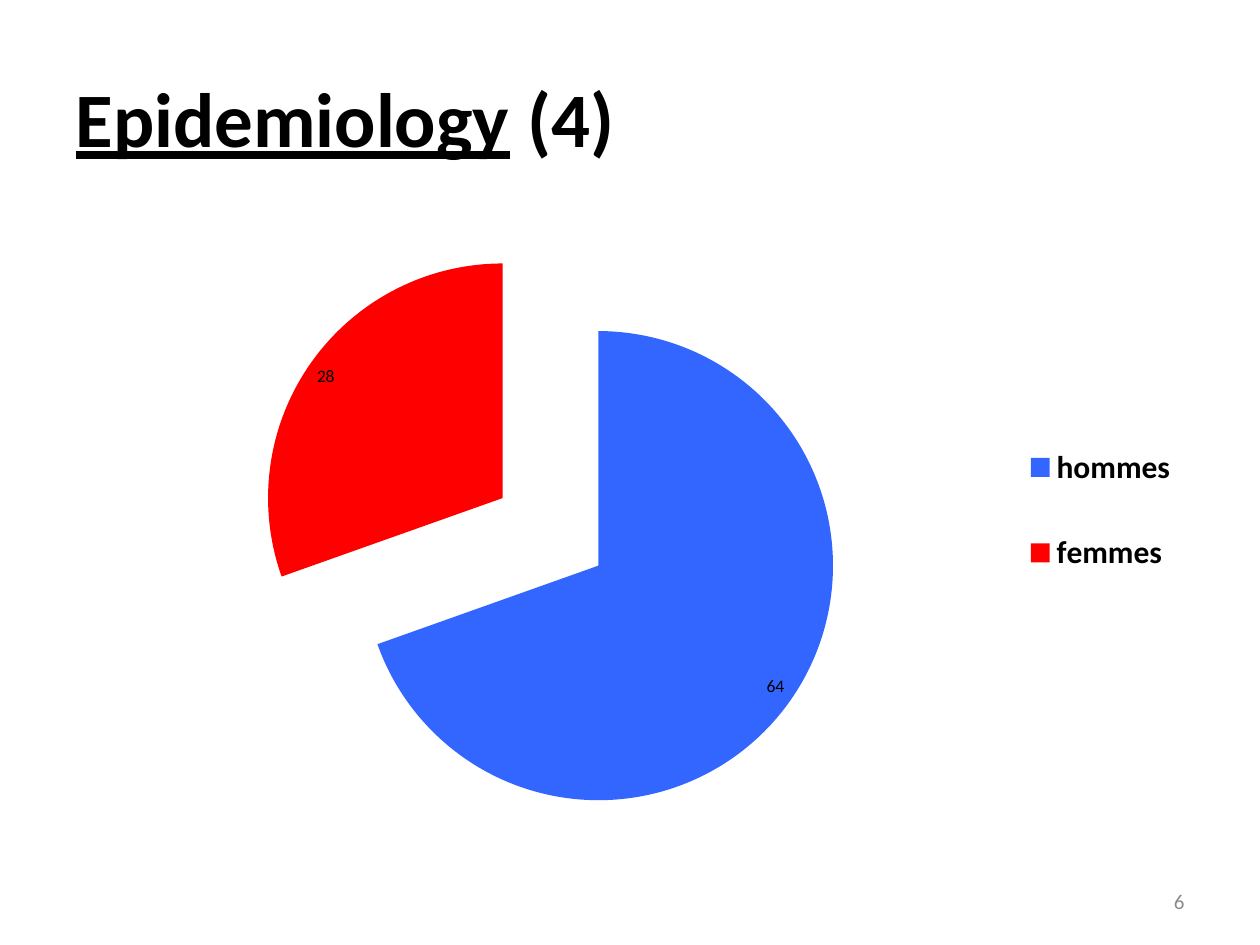
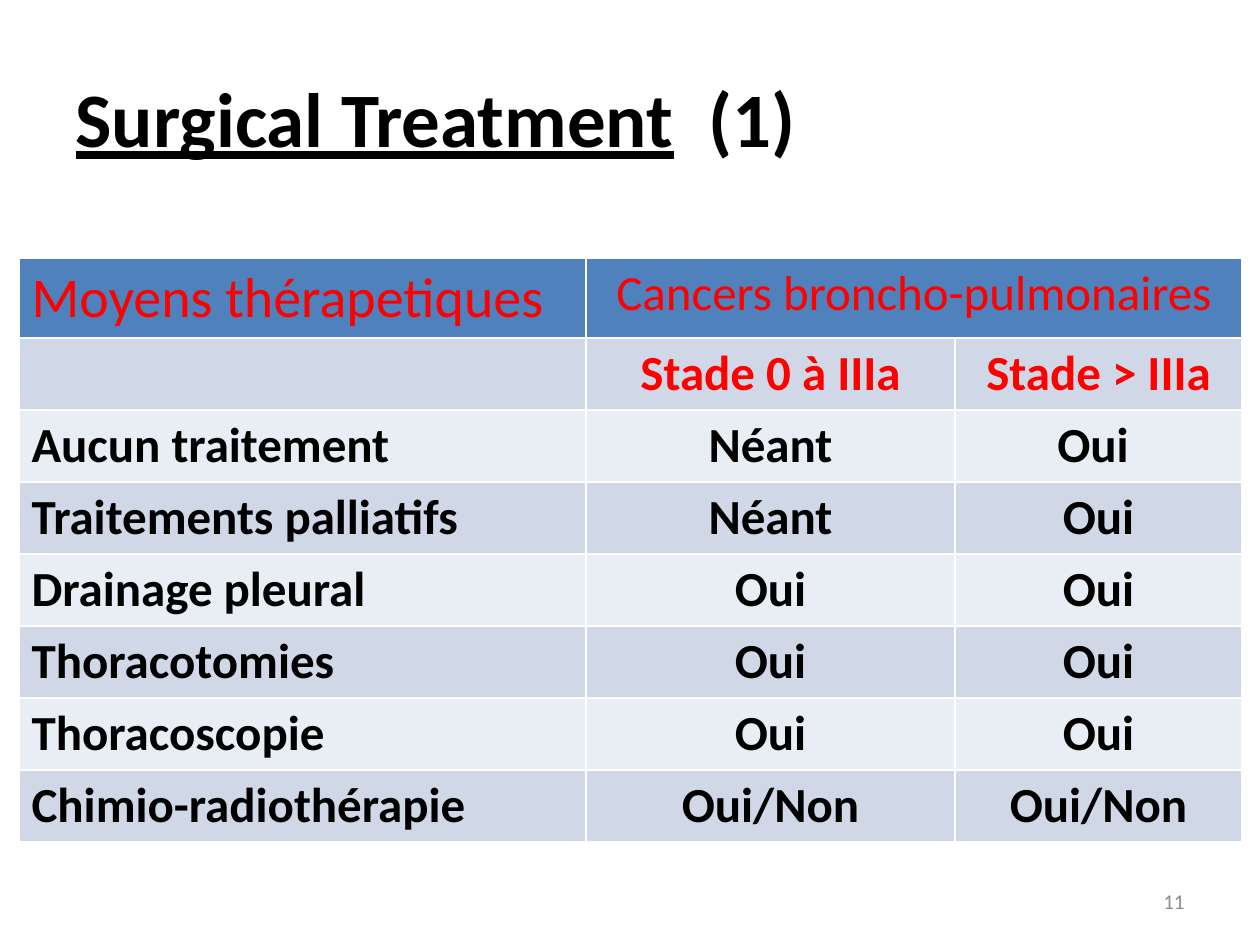
from lxml.etree import SubElement
from pptx import Presentation
from pptx.chart.data import CategoryChartData
from pptx.dml.color import RGBColor
from pptx.enum.chart import XL_CHART_TYPE, XL_LABEL_POSITION, XL_LEGEND_POSITION
from pptx.enum.text import MSO_ANCHOR, PP_ALIGN
from pptx.oxml import parse_xml
from pptx.oxml.ns import nsdecls, qn
from pptx.util import Pt

EMU_PER_PX = 914400 / 126
FONT = "Calibri"
BLACK, RED, BLUE, GREY = "000000", "FF0000", "3366FF", "8C8C8C"
HEADER, BAND_DARK, BAND_LIGHT = "4F81BD", "D0D8E8", "E9EDF4"

TITLE = {"size": 44, "bold": True, "color": BLACK}
NUMBER = {"size": 12, "color": GREY}
HEAD_LEFT = {"size": 32, "bold": False, "color": RED}
HEAD_RIGHT = HEAD_LEFT | {"size": 28}
STAGE = HEAD_RIGHT | {"bold": True}
BODY = STAGE | {"color": BLACK}

STAGES = ["", "Stade 0 à IIIa", "Stade > IIIa"]
TREATMENTS = [
    ["Aucun traitement", "Néant", "Oui "],
    ["Traitements palliatifs", "Néant", "Oui"],
    ["Drainage pleural", "Oui", "Oui"],
    ["Thoracotomies", "Oui", "Oui"],
    ["Thoracoscopie", "Oui", "Oui"],
    ["Chimio-radiothérapie", "Oui/Non", "Oui/Non"],
]


def px(n):
    return round(n * EMU_PER_PX)


def box(*lengths):
    return [px(n) for n in lengths]


def rgb(color):
    return RGBColor.from_string(color)


def set_font(font, fmt):
    for key, value in ({"name": FONT} | fmt).items():
        if key == "color":
            font.color.rgb = rgb(value)
        else:
            setattr(font, key, Pt(value) if key == "size" else value)


def add_run(p, text, fmt):
    r = p.add_run()
    r.text = text
    set_font(r.font, fmt)


def add_slide(prs, topic, part, number):
    s = prs.slides.add_slide(prs.slide_layouts[5])
    title = s.shapes.title
    title.left, title.top, title.width, title.height = box(63, 38, 1134, 157)
    title.text_frame.vertical_anchor = MSO_ANCHOR.MIDDLE
    p = title.text_frame.paragraphs[0]
    p.alignment = PP_ALIGN.JUSTIFY
    add_run(p, topic, TITLE | {"underline": True})
    add_run(p, part, TITLE | {"underline": False})

    tf = s.shapes.add_textbox(*box(903, 876, 294, 50)).text_frame
    tf.word_wrap = True
    tf.vertical_anchor = MSO_ANCHOR.MIDDLE
    p = tf.paragraphs[0]
    p.alignment = PP_ALIGN.RIGHT
    add_run(p, number, NUMBER)
    return s


def make_layout(x, y, w, h, inner=False):
    layout = parse_xml(f"<c:layout {nsdecls('c')}><c:manualLayout/></c:layout>")
    values = {"layoutTarget": "inner"} if inner else {}
    values |= {"xMode": "edge", "yMode": "edge", "x": x, "y": y, "w": w, "h": h}
    for tag, value in values.items():
        SubElement(layout[0], qn(f"c:{tag}")).set("val", str(value))
    return layout


def add_pie(s, categories, values, colors):
    data = CategoryChartData()
    data.categories = categories
    data.add_series("Series 1", values)
    chart = s.shapes.add_chart(
        XL_CHART_TYPE.PIE, *box(63, 220, 1134, 624), data).chart
    set_font(chart.font, {"size": 10, "color": BLACK})
    chart.has_title = False
    chart.has_legend = True
    legend = chart.legend
    legend.position = XL_LEGEND_POSITION.RIGHT
    legend.include_in_layout = False
    set_font(legend.font, {"size": 18, "bold": True, "color": BLACK})

    plot = chart.plots[0]
    plot.vary_by_categories = True
    plot.has_data_labels = True
    labels = plot.data_labels
    labels.show_value = True
    labels.show_percentage = False
    labels.position = XL_LABEL_POSITION.INSIDE_END
    series = plot.series[0]
    for i, color in enumerate(colors):
        fill = series.points[i].format.fill
        fill.solid()
        fill.fore_color.rgb = rgb(color)
    first_point = series._element.find(qn("c:dPt"))
    first_point.addprevious(parse_xml(f'<c:explosion {nsdecls("c")} val="25"/>'))

    area = chart._chartSpace.chart.plotArea
    for old in area.findall(qn("c:layout")):
        area.remove(old)
    area.insert(0, make_layout(0.17, 0.03, 0.52, 0.94, inner=True))
    for old in legend._element.findall(qn("c:layout")):
        legend._element.remove(old)
    legend._element.find(qn("c:legendPos")).addnext(
        make_layout(0.84, 0.29, 0.15, 0.35))


def fill_cell(cell, text, fmt, fill, centred):
    cell.fill.solid()
    cell.fill.fore_color.rgb = rgb(fill)
    if text:
        p = cell.text_frame.paragraphs[0]
        p.alignment = PP_ALIGN.CENTER if centred else PP_ALIGN.LEFT
        add_run(p, text, fmt)


def add_treatment_table(s):
    rows = [STAGES] + TREATMENTS
    widths = [567, 369, 287]
    table = s.shapes.add_table(
        len(rows) + 1, 3, *box(19, 258, sum(widths), 587)).table
    for column, width in zip(table.columns, widths):
        column.width = px(width)
    for i, row in enumerate(table.rows):
        row.height = px(72 if i else 80)

    table.cell(0, 1).merge(table.cell(0, 2))
    fill_cell(table.cell(0, 0), "Moyens thérapetiques", HEAD_LEFT, HEADER, False)
    fill_cell(table.cell(0, 1), "Cancers broncho-pulmonaires", HEAD_RIGHT, HEADER, True)
    for i, texts in enumerate(rows, 1):
        band = BAND_DARK if i % 2 else BAND_LIGHT
        for j, text in enumerate(texts):
            fill_cell(table.cell(i, j), text, STAGE if i == 1 else BODY, band, j > 0)


def main():
    prs = Presentation()
    prs.slide_width, prs.slide_height = box(1260, 945)
    s = add_slide(prs, "Epidemiology", " (4)", "6")
    add_pie(s, ["hommes", "femmes"], [64, 28], [BLUE, RED])
    s = add_slide(prs, "Surgical Treatment", "  (1)", "11")
    add_treatment_table(s)
    prs.save("out.pptx")


if __name__ == "__main__":
    main()
